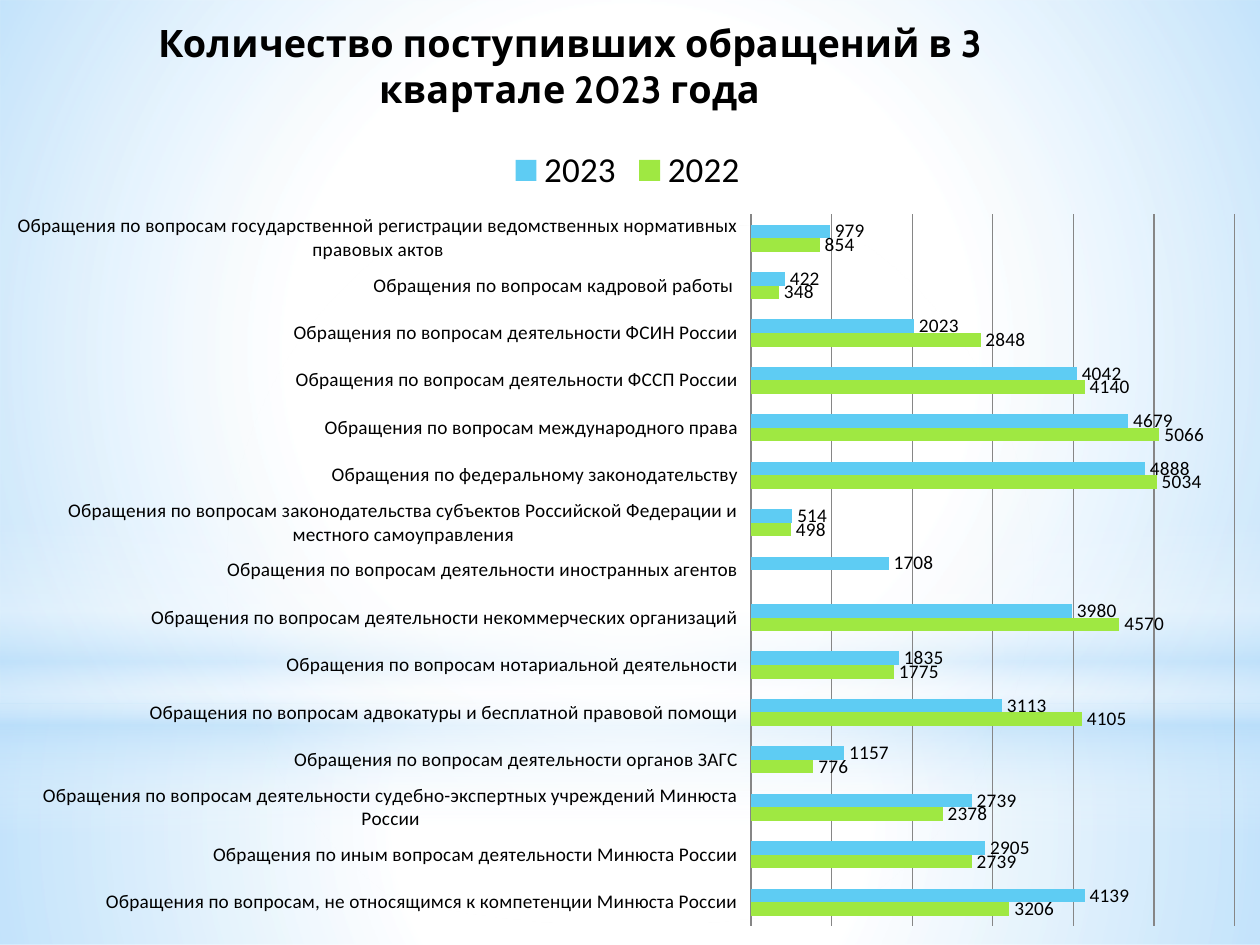
from pptx import Presentation
from pptx.chart.data import CategoryChartData
from pptx.dml.color import RGBColor
from pptx.enum.chart import XL_CHART_TYPE, XL_LABEL_POSITION, XL_LEGEND_POSITION, XL_TICK_LABEL_POSITION, XL_TICK_MARK
from pptx.enum.shapes import MSO_SHAPE
from pptx.oxml import parse_xml
from pptx.oxml.ns import nsdecls
from pptx.util import Pt

BLACK = RGBColor(0x00, 0x00, 0x00)
WHITE = RGBColor(0xFF, 0xFF, 0xFF)
GREY = RGBColor(0x86, 0x86, 0x86)
PALE_BLUE = RGBColor(0xB4, 0xDC, 0xFA)
GREEN = RGBColor(0x9F, 0xE8, 0x42)
BLUE = RGBColor(0x5E, 0xCC, 0xF3)

TITLE = "Количество поступивших обращений в 3 квартале 2023 года"
APPEALS = [
    ("Обращения по вопросам, не относящимся к компетенции Минюста России", 3206, 4139),
    ("Обращения по иным вопросам деятельности Минюста России", 2739, 2905),
    ("Обращения по вопросам деятельности судебно-экспертных учреждений Минюста России", 2378, 2739),
    ("Обращения по вопросам деятельности органов ЗАГС", 776, 1157),
    ("Обращения по вопросам адвокатуры и бесплатной правовой помощи", 4105, 3113),
    ("Обращения по вопросам нотариальной деятельности", 1775, 1835),
    ("Обращения по вопросам деятельности некоммерческих организаций", 4570, 3980),
    ("Обращения по вопросам деятельности иностранных агентов", None, 1708),
    ("Обращения по вопросам законодательства субъектов Российской Федерации и местного самоуправления", 498, 514),
    ("Обращения по федеральному законодательству", 5034, 4888),
    ("Обращения по вопросам международного права", 5066, 4679),
    ("Обращения по вопросам деятельности ФССП России", 4140, 4042),
    ("Обращения по вопросам деятельности ФСИН России", 2848, 2023),
    ("Обращения по вопросам кадровой работы ", 348, 422),
    ("Обращения по вопросам государственной регистрации ведомственных нормативных правовых актов", 854, 979),
]
CIRCLE = '<a:path path="circle"><a:fillToRect l="50000" t="50000" r="50000" b="50000"/></a:path>'
DOWNWARD = '<a:lin ang="5400000" scaled="0"/>'


def add_glow(page, kind, box, stops, direction):
    glow = page.shapes.add_shape(kind, *box)
    glow.shadow.inherit = False
    glow.line.fill.background()
    glow.fill.background()
    stop_xml = "".join(
        f'<a:gs pos="{place * 1000}"><a:srgbClr val="{color}">'
        f'<a:alpha val="{opacity * 1000}"/></a:srgbClr></a:gs>'
        for place, color, opacity in stops
    )
    gradient = parse_xml(
        f'<a:gradFill {nsdecls("a")} rotWithShape="1"><a:gsLst>{stop_xml}</a:gsLst>{direction}</a:gradFill>'
    )
    properties = glow.element.spPr
    properties.replace(properties.xpath("a:noFill")[0], gradient)


def add_backdrop(page, box):
    left, top, width, height = box
    horizon = Pt(402)
    add_glow(page, MSO_SHAPE.RECTANGLE, (left, top + horizon, width, height - horizon),
             [(0, WHITE, 91), (37, WHITE, 76), (100, PALE_BLUE, 79)], CIRCLE)
    add_glow(page, MSO_SHAPE.RECTANGLE, (left, top, width, horizon),
             [(0, WHITE, 89), (48, WHITE, 62), (100, PALE_BLUE, 79)], CIRCLE)
    add_glow(page, MSO_SHAPE.RECTANGLE, (left, top + Pt(297), width, Pt(180)),
             [(0, WHITE, 0), (29, WHITE, 30), (45, PALE_BLUE, 40),
              (55, WHITE, 26), (65, PALE_BLUE, 60), (100, WHITE, 0)], DOWNWARD)
    add_glow(page, MSO_SHAPE.OVAL, (left, top + Pt(126), width, horizon),
             [(0, WHITE, 100), (56, WHITE, 0)], CIRCLE)


def set_font(font, size, name="Calibri", bold=False):
    font.size = Pt(size)
    font.name = name
    font.bold = bold
    font.color.rgb = BLACK


def place_part(chart, tag, index, target="", **fractions):
    part = chart.element.xpath(f"c:chart//c:{tag}")[0]
    for layout in part.xpath("c:layout"):
        part.remove(layout)
    modes = "".join(f'<c:{axis}Mode val="edge"/>' for axis in "xy")
    sizes = "".join(f'<c:{key} val="{value}"/>' for key, value in fractions.items())
    part.insert(index, parse_xml(
        f'<c:layout {nsdecls("c")}><c:manualLayout>{target}{modes}{sizes}</c:manualLayout></c:layout>'
    ))


def add_appeals_chart(page, box):
    names, previous, current = zip(*APPEALS)
    chart_data = CategoryChartData()
    chart_data.categories = names
    chart_data.add_series("2022", previous)
    chart_data.add_series("2023", current)
    chart = page.shapes.add_chart(XL_CHART_TYPE.BAR_CLUSTERED, *box, chart_data).chart
    set_font(chart.font, 18, "Cabin")

    chart.has_title = True
    chart.chart_title.include_in_layout = False
    chart.chart_title.text_frame.text = TITLE
    set_font(chart.chart_title.text_frame.paragraphs[0].font, 21.6, "Cabin", True)

    chart.has_legend = True
    chart.legend.position = XL_LEGEND_POSITION.TOP
    chart.legend.include_in_layout = False
    set_font(chart.legend.font, 20)

    category_axis = chart.category_axis
    category_axis.major_tick_mark = XL_TICK_MARK.NONE
    category_axis.tick_label_position = XL_TICK_LABEL_POSITION.LOW
    category_axis.format.line.color.rgb = GREY
    set_font(category_axis.tick_labels.font, 11)
    value_axis = chart.value_axis
    value_axis.visible = False
    value_axis.minimum_scale = 0
    value_axis.maximum_scale = 6000
    value_axis.major_unit = 1000
    value_axis.has_major_gridlines = True
    value_axis.major_gridlines.format.line.color.rgb = GREY
    value_axis.major_gridlines.format.line.width = Pt(0.75)

    plot = chart.plots[0]
    plot.gap_width = 150
    plot.overlap = 0
    plot.vary_by_categories = False
    for series, color in zip(plot.series, (GREEN, BLUE)):
        series.format.fill.solid()
        series.format.fill.fore_color.rgb = color
        series.invert_if_negative = False
        labels = series.data_labels
        labels.show_value = True
        labels.position = XL_LABEL_POSITION.OUTSIDE_END
        set_font(labels.font, 11)

    place_part(chart, "title", 1, x=0.12, y=0.01)
    place_part(chart, "legend", 1, x=0.4, y=0.15)
    place_part(chart, "plotArea", 0, '<c:layoutTarget val="inner"/>', x=0.596, y=0.227, w=0.384, h=0.753)


def main():
    deck = Presentation()
    deck.slide_width, deck.slide_height = Pt(720), Pt(540)
    page = deck.slides.add_slide(deck.slide_layouts[6])
    page.background.fill.solid()
    page.background.fill.fore_color.rgb = WHITE
    box = (Pt(0), Pt(0), Pt(720), Pt(540))
    add_backdrop(page, box)
    add_appeals_chart(page, box)
    deck.save("out.pptx")


if __name__ == "__main__":
    main()
